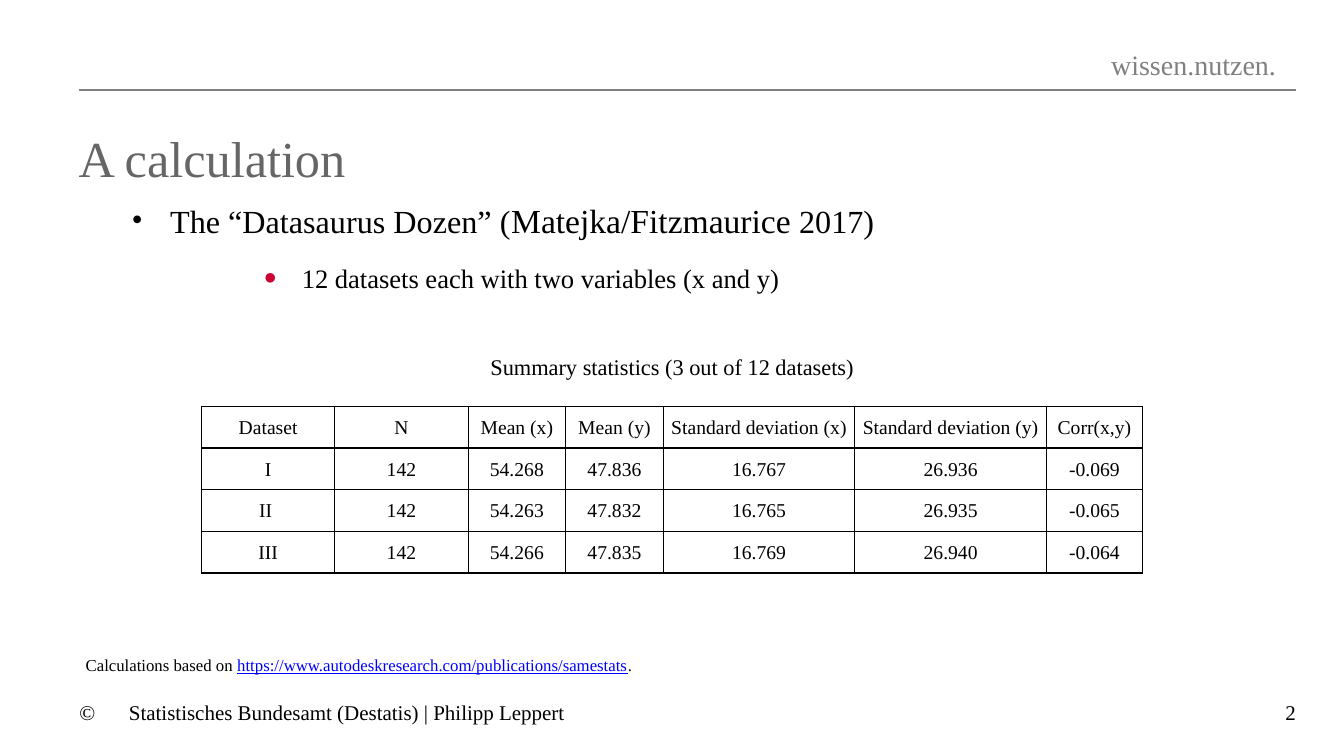
from lxml import etree
from pptx import Presentation
from pptx.dml.color import RGBColor
from pptx.enum.shapes import MSO_CONNECTOR
from pptx.enum.text import MSO_ANCHOR, PP_ALIGN
from pptx.oxml.ns import qn
from pptx.util import Cm, Pt

STRAIGHT = MSO_CONNECTOR.STRAIGHT
TOP, MIDDLE, BOTTOM = MSO_ANCHOR.TOP, MSO_ANCHOR.MIDDLE, MSO_ANCHOR.BOTTOM
LEFT, CENTER, RIGHT = PP_ALIGN.LEFT, PP_ALIGN.CENTER, PP_ALIGN.RIGHT

FONT = "Times New Roman"
BLACK, GREY, TITLE_GREY = "000000", "808080", "666666"
RED, LINK_BLUE = "CC0033", "0000FF"

COL_WIDTHS = [3.36, 3.36, 2.46, 2.46, 4.83, 4.83, 2.42]
ROW_HEIGHT = 1.05
STATISTICS = [
    ["Dataset", "N", "Mean (x)", "Mean (y)", "Standard deviation (x)",
     "Standard deviation (y)", "Corr(x,y)"],
    ["I", "142", "54.268", "47.836", "16.767", "26.936", "-0.069"],
    ["II ", "142", "54.263", "47.832", "16.765", "26.935", "-0.065"],
    ["III", "142", "54.266", "47.835", "16.769", "26.940", "-0.064"],
]


def rgb(value):
    """Return the colour for a hex string."""
    return RGBColor.from_string(value)


def sub(parent, tag, **attrs):
    """Append a DrawingML child element with the given attributes."""
    el = etree.SubElement(parent, qn(tag))
    for name, value in attrs.items():
        el.set(name, str(value))
    return el


def add_run(p, text, size, color=BLACK, underline=None):
    """Add one formatted run to a paragraph."""
    r = p.add_run()
    r.text = text
    r.font.name = FONT
    r.font.size = Pt(size)
    r.font.color.rgb = rgb(color)
    r.font.underline = underline


def add_box(s, left, top, width, height, anchor=TOP, align=LEFT):
    """Add a text box without insets and return its text frame."""
    sp = s.shapes.add_textbox(Cm(left), Cm(top), Cm(width), Cm(height))
    tf = sp.text_frame
    tf.word_wrap = True
    tf.vertical_anchor = anchor
    tf.margin_left = tf.margin_right = tf.margin_top = tf.margin_bottom = 0
    tf.paragraphs[0].alignment = align
    return tf


def add_label(s, box, text, size, color=BLACK, anchor=TOP, align=LEFT):
    """Add a one-run text box and return its paragraph."""
    p = add_box(s, *box, anchor, align).paragraphs[0]
    add_run(p, text, size, color)
    return p


def set_bullet(p, margin, color=BLACK, percent=100):
    """Give a paragraph a hanging round bullet."""
    pPr = p._p.get_or_add_pPr()
    pPr.set("marL", str(Cm(margin)))
    pPr.set("indent", str(Cm(-0.97)))
    sub(sub(pPr, "a:buClr"), "a:srgbClr", val=color)
    sub(pPr, "a:buSzPct", val=percent * 1000)
    sub(pPr, "a:buFont", typeface=FONT)
    sub(pPr, "a:buChar", char="•")


def add_rule(s, left, right, y):
    """Add the horizontal header line."""
    line = s.shapes.add_connector(STRAIGHT, Cm(left), Cm(y), Cm(right), Cm(y))
    line.line.color.rgb = rgb(GREY)
    line.line.width = Pt(1.5)
    sub(line._element.spPr, "a:effectLst")


def add_bullets(s):
    """Add the two-level list that introduces the data."""
    tf = add_box(s, 2, 5.03, 30.68, 3.2)
    p = tf.paragraphs[0]
    set_bullet(p, 2.29)
    p.space_after = Pt(8)
    add_run(p, "The “Datasaurus Dozen” (", 23)
    add_run(p, "Matejka/Fitzmaurice", 24)
    add_run(p, " 2017)", 23)
    p = tf.add_paragraph()
    p.level = 1
    set_bullet(p, 5.61, RED, 150)
    p.space_before = Pt(8)
    add_run(p, "12 datasets each with two variables (x and y)", 19)


def format_cell(cell, text):
    """Fill one table cell with centred text and thin borders."""
    tcPr = cell._tc.get_or_add_tcPr()
    for side in ("a:lnL", "a:lnR", "a:lnT", "a:lnB"):
        ln = sub(tcPr, side, w=Pt(1))
        sub(sub(ln, "a:solidFill"), "a:srgbClr", val=BLACK)
    cell.fill.background()
    cell.margin_left = cell.margin_right = cell.margin_top = Cm(0.03)
    cell.margin_bottom = 0
    cell.vertical_anchor = MIDDLE
    p = cell.text_frame.paragraphs[0]
    p.alignment = CENTER
    add_run(p, text, 14)


def add_statistics(s, left, top):
    """Add the table of summary statistics."""
    rows, cols = len(STATISTICS), len(COL_WIDTHS)
    table = s.shapes.add_table(rows, cols, Cm(left), Cm(top),
                               Cm(sum(COL_WIDTHS)), Cm(rows * ROW_HEIGHT)).table
    table.first_row = table.horz_banding = False
    for column, width in zip(table.columns, COL_WIDTHS):
        column.width = Cm(width)
    for i, values in enumerate(STATISTICS):
        table.rows[i].height = Cm(ROW_HEIGHT)
        for j, text in enumerate(values):
            format_cell(table.cell(i, j), text)


def add_source(s):
    """Add the source line with its web address."""
    p = add_box(s, 2.16, 16.5, 18.2, 0.69).paragraphs[0]
    add_run(p, "Calculations based on ", 12)
    add_run(p, "https://www.autodeskresearch.com/publications/samestats",
            12, LINK_BLUE, True)
    add_run(p, ".", 12)


def add_footer(s):
    """Add the copyright line and the slide number."""
    p = add_label(s, (2, 17.53, 24.4, 0.74),
                  "©\tStatistisches Bundesamt (Destatis) | Philipp Leppert",
                  15, anchor=BOTTOM)
    tabs = sub(p._p.get_or_add_pPr(), "a:tabLst")
    sub(tabs, "a:tab", pos=Cm(1.25), algn="l")
    add_label(s, (30.28, 17.53, 2.39, 0.74), "2", 15,
              anchor=BOTTOM, align=RIGHT)


def main():
    """Build the slide and save it."""
    prs = Presentation()
    prs.slide_width, prs.slide_height = Cm(33.88), Cm(19.05)
    s = prs.slides.add_slide(prs.slide_layouts[6])
    add_rule(s, 2, 32.67, 2.27)
    add_label(s, (26.6, 1.2, 6.98, 0.86), "wissen.nutzen.", 20, GREY,
              MIDDLE, CENTER)
    add_label(s, (1.98, 3.2, 30.7, 1.7), "A calculation", 36, TITLE_GREY)
    add_bullets(s)
    add_label(s, (11.92, 8.9, 10.05, 1.04),
              "Summary statistics (3 out of 12 datasets)", 16, align=CENTER)
    add_statistics(s, 5.08, 10.24)
    add_source(s)
    add_footer(s)
    prs.save("out.pptx")


if __name__ == "__main__":
    main()
